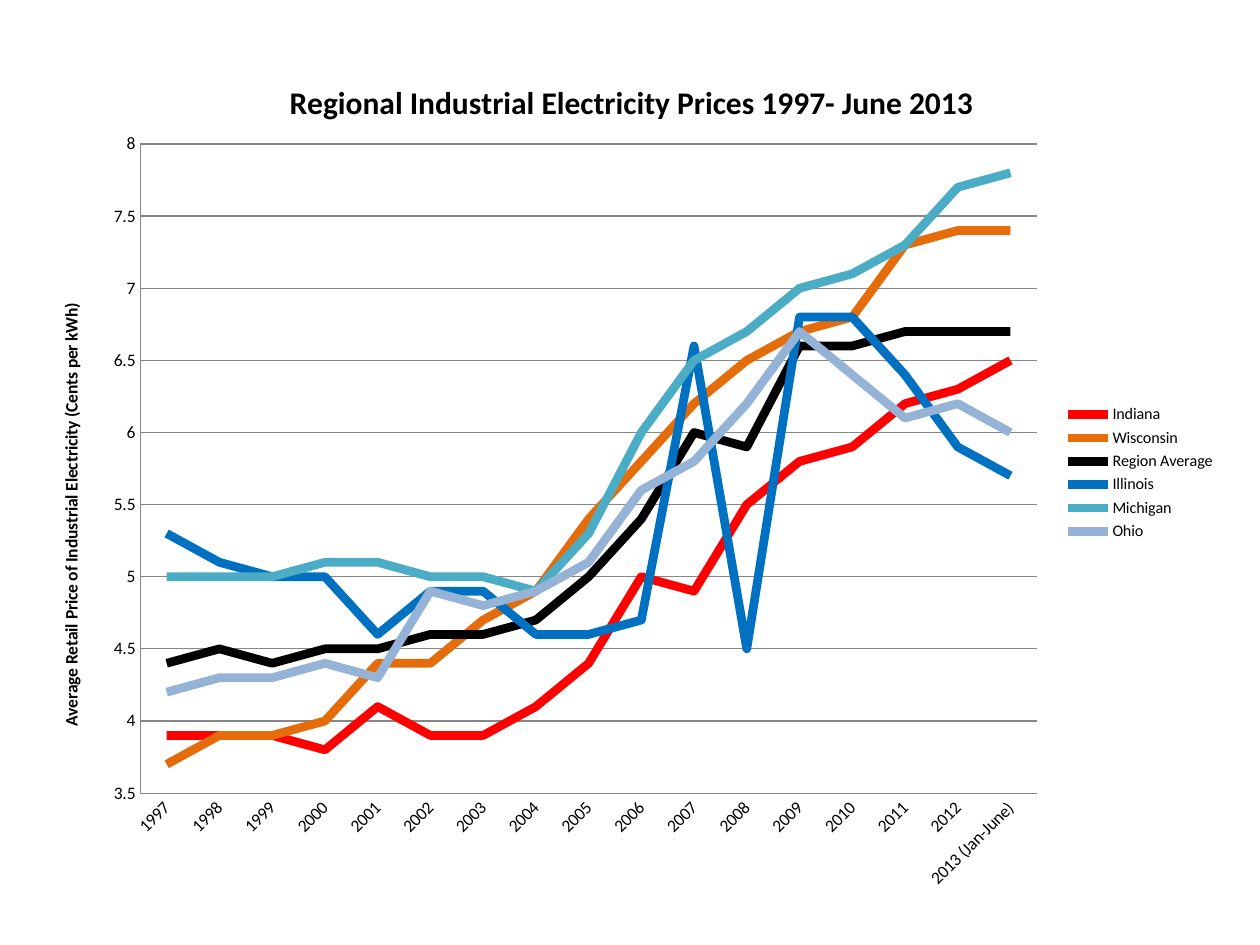
import pptx
import pptx.chart.data
import pptx.dml.color
import pptx.enum.chart
import pptx.oxml
import pptx.oxml.ns
import pptx.util

Cm = pptx.util.Cm
Pt = pptx.util.Pt
RGBColor = pptx.dml.color.RGBColor

BLACK = RGBColor(0x00, 0x00, 0x00)
GRID_GREY = RGBColor(0x87, 0x87, 0x87)
RED = RGBColor(0xFF, 0x00, 0x00)
ORANGE = RGBColor(0xE4, 0x6C, 0x0A)
BLUE = RGBColor(0x00, 0x70, 0xC0)
TEAL = RGBColor(0x4B, 0xAC, 0xC6)
PALE_BLUE = RGBColor(0x95, 0xB3, 0xD7)
FONT = "Calibri"

YEARS = [str(year) for year in range(1997, 2013)] + ["2013 (Jan-June)"]
PRICES = [
    ("Indiana", RED, [3.9, 3.9, 3.9, 3.8, 4.1, 3.9, 3.9, 4.1, 4.4, 5, 4.9, 5.5,
                      5.8, 5.9, 6.2, 6.3, 6.5]),
    ("Wisconsin", ORANGE, [3.7, 3.9, 3.9, 4, 4.4, 4.4, 4.7, 4.9, 5.4, 5.8, 6.2, 6.5,
                           6.7, 6.8, 7.3, 7.4, 7.4]),
    ("Region Average", BLACK, [4.4, 4.5, 4.4, 4.5, 4.5, 4.6, 4.6, 4.7, 5, 5.4, 6, 5.9,
                               6.6, 6.6, 6.7, 6.7, 6.7]),
    ("Illinois", BLUE, [5.3, 5.1, 5, 5, 4.6, 4.9, 4.9, 4.6, 4.6, 4.7, 6.6, 4.5,
                        6.8, 6.8, 6.4, 5.9, 5.7]),
    ("Michigan", TEAL, [5, 5, 5, 5.1, 5.1, 5, 5, 4.9, 5.3, 6, 6.5, 6.7,
                        7, 7.1, 7.3, 7.7, 7.8]),
    ("Ohio", PALE_BLUE, [4.2, 4.3, 4.3, 4.4, 4.3, 4.9, 4.8, 4.9, 5.1, 5.6, 5.8, 6.2,
                         6.7, 6.4, 6.1, 6.2, 6]),
]


def set_layout(element, index, **fractions):
    """Place a chart part by fractions of the chart's width and height."""
    for old in element.findall(pptx.oxml.ns.qn("c:layout")):
        element.remove(old)
    target = '<c:layoutTarget val="inner"/>' if "w" in fractions else ""
    modes = '<c:xMode val="edge"/><c:yMode val="edge"/>'
    values = "".join(f'<c:{key} val="{value}"/>' for key, value in fractions.items())
    element.insert(index, pptx.oxml.parse_xml(
        f'<c:layout {pptx.oxml.ns.nsdecls("c")}><c:manualLayout>'
        f"{target}{modes}{values}</c:manualLayout></c:layout>"))


def rotate_text(element, degrees):
    body = element.find(".//" + pptx.oxml.ns.qn("a:bodyPr"))
    body.set("rot", str(degrees * 60000))
    body.set("vert", "horz")


def write_title(title, text, size):
    title.text_frame.text = text
    font = title.text_frame.paragraphs[0].font
    font.name, font.size, font.bold = FONT, Pt(size), True
    font.color.rgb = BLACK


def style_line(line, color, width):
    line.color.rgb = color
    line.width = Pt(width)


def style_axes(chart):
    years, price = chart.category_axis, chart.value_axis
    for axis in (years, price):
        axis.major_tick_mark = pptx.enum.chart.XL_TICK_MARK.NONE
        axis.minor_tick_mark = pptx.enum.chart.XL_TICK_MARK.NONE
        style_line(axis.format.line, GRID_GREY, 0.75)
        labels = axis.tick_labels.font
        labels.name, labels.size = FONT, Pt(10)
        labels.color.rgb = BLACK
    rotate_text(years._element.find(pptx.oxml.ns.qn("c:txPr")), -45)

    price.minimum_scale, price.maximum_scale, price.major_unit = 3.5, 8, 0.5
    price.tick_labels.number_format = "General"
    price.tick_labels.number_format_is_linked = False
    price.has_major_gridlines = True
    style_line(price.major_gridlines.format.line, GRID_GREY, 0.75)
    write_title(price.axis_title,
                "Average Retail Price of Industrial Electricity (Cents per kWh)", 10)
    rotate_text(price.axis_title._element, -90)
    set_layout(price.axis_title._element, 1, x=0.02, y=0.3)


def add_price_chart(slide, left, top, width, height):
    data = pptx.chart.data.CategoryChartData()
    data.categories = YEARS
    for state, _, prices in PRICES:
        data.add_series(state, prices)
    chart = slide.shapes.add_chart(pptx.enum.chart.XL_CHART_TYPE.LINE,
                                   left, top, width, height, data).chart
    chart.font.name, chart.font.size = FONT, Pt(10)
    chart.font.color.rgb = BLACK

    # Title and plot area
    chart.has_title = True
    write_title(chart.chart_title, "Regional Industrial Electricity Prices 1997- June 2013", 18)
    set_layout(chart.chart_title._element, 1, x=0.21, y=0.04)
    plot_area = chart._chartSpace.chart.plotArea
    set_layout(plot_area, 0, x=0.09, y=0.12, w=0.75, h=0.75)
    style_axes(chart)

    # State lines
    chart.plots[0].vary_by_categories = False
    for series, (_, color, _) in zip(chart.plots[0].series, PRICES):
        series.smooth = False
        series.marker.style = pptx.enum.chart.XL_MARKER_STYLE.NONE
        style_line(series.format.line, color, 5)

    # Legend
    chart.has_legend = True
    legend = chart.legend
    legend.position = pptx.enum.chart.XL_LEGEND_POSITION.RIGHT
    legend.include_in_layout = False
    legend.font.name, legend.font.size = FONT, Pt(9.2)
    legend.font.color.rgb = BLACK


def main():
    deck = pptx.Presentation()
    deck.slide_width, deck.slide_height = Cm(25.4), Cm(19.05)
    slide = deck.slides.add_slide(deck.slide_layouts[6])
    add_price_chart(slide, Cm(0.66), Cm(0.81), Cm(24.1), Cm(17.45))
    deck.save("out.pptx")


if __name__ == "__main__":
    main()
